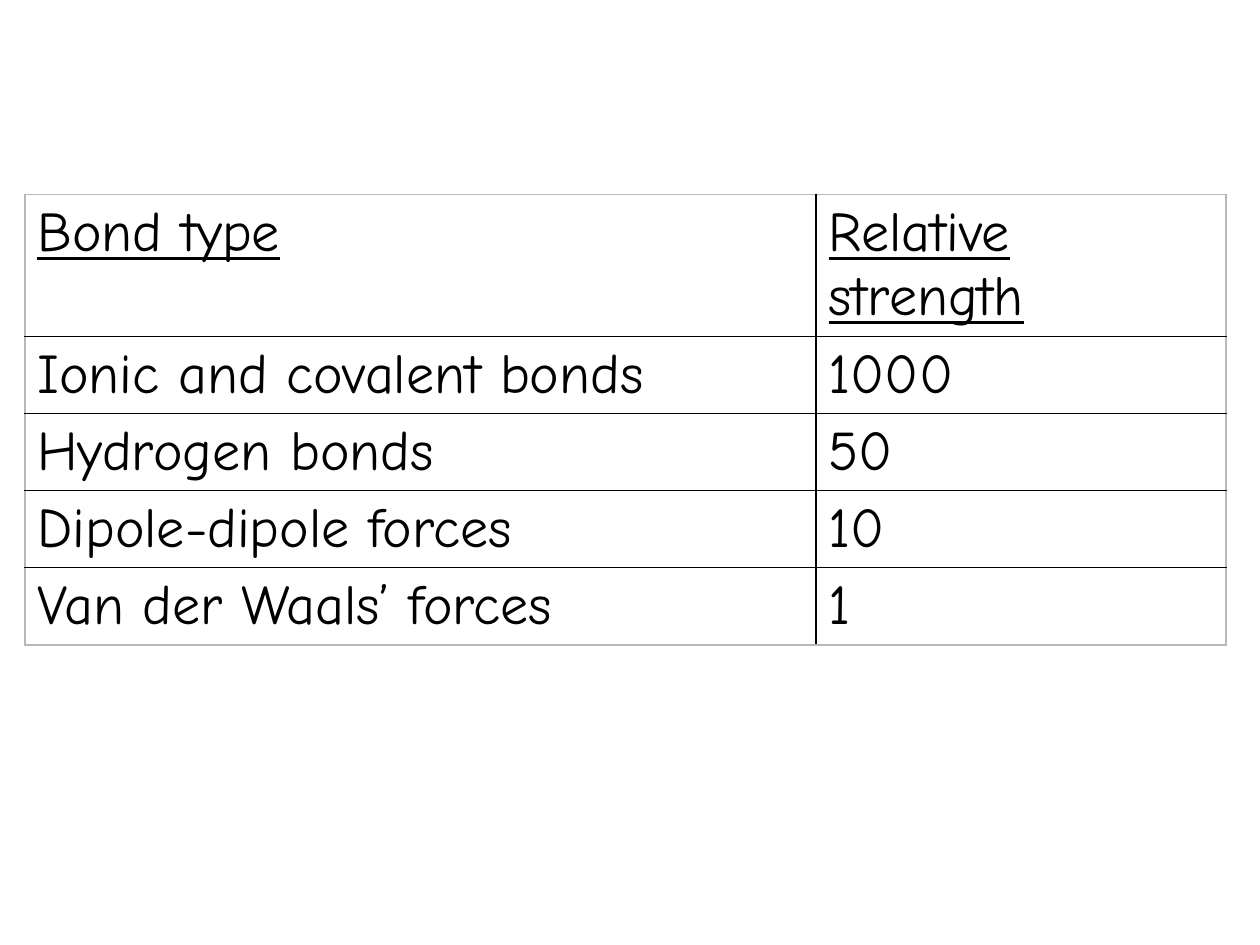
from lxml import etree
from pptx import Presentation
from pptx.dml.color import RGBColor
from pptx.oxml.ns import qn
from pptx.util import Cm, Pt

BLACK = RGBColor(0x00, 0x00, 0x00)
GREY = RGBColor(0xB8, 0xB8, 0xB8)
WHITE = RGBColor(0xFF, 0xFF, 0xFF)

ROWS = [
    ("Bond type", "Relative strength"),
    ("Ionic and covalent bonds", "1000"),
    ("Hydrogen bonds", "50"),
    ("Dipole-dipole forces", "10"),
    ("Van der Waals’ forces", "1"),
]
COLUMN_WIDTHS = [15.95, 8.26]
HEADER_HEIGHT, BODY_HEIGHT = 2.86, 1.55
LEFT, TOP = 0.5, 3.92
TEXT_FORMAT = {"name": "Comic Neue", "size": Pt(32), "bold": False}


def add_border(cell, side, color):
    line = etree.SubElement(cell._tc.get_or_add_tcPr(), qn(f"a:ln{side}"), w=str(Pt(1)))
    fill = etree.SubElement(line, qn("a:solidFill"))
    etree.SubElement(fill, qn("a:srgbClr"), val=str(color))


def format_cell(cell, text, is_header, outer_sides):
    for side, is_outer in outer_sides.items():
        add_border(cell, side, GREY if is_outer else BLACK)
    cell.fill.solid()
    cell.fill.fore_color.rgb = WHITE
    cell.text = text
    font = cell.text_frame.paragraphs[0].runs[0].font
    for name, value in TEXT_FORMAT.items():
        setattr(font, name, value)
    font.underline = is_header
    font.color.rgb = BLACK


def main():
    presentation = Presentation()
    presentation.slide_width, presentation.slide_height = Cm(25.4), Cm(19.05)
    slide = presentation.slides.add_slide(presentation.slide_layouts[6])

    row_heights = [HEADER_HEIGHT] + [BODY_HEIGHT] * (len(ROWS) - 1)
    table = slide.shapes.add_table(
        len(ROWS), len(COLUMN_WIDTHS), Cm(LEFT), Cm(TOP),
        Cm(sum(COLUMN_WIDTHS)), Cm(sum(row_heights)),
    ).table
    table.horz_banding = False
    for column, width in zip(table.columns, COLUMN_WIDTHS):
        column.width = Cm(width)
    for row, height in zip(table.rows, row_heights):
        row.height = Cm(height)

    last_row, last_column = len(ROWS) - 1, len(COLUMN_WIDTHS) - 1
    for row_index, texts in enumerate(ROWS):
        for column_index, text in enumerate(texts):
            outer_sides = {
                "L": column_index == 0,
                "R": column_index == last_column,
                "T": row_index == 0,
                "B": row_index == last_row,
            }
            format_cell(table.cell(row_index, column_index), text, row_index == 0, outer_sides)

    presentation.save("out.pptx")


if __name__ == "__main__":
    main()
